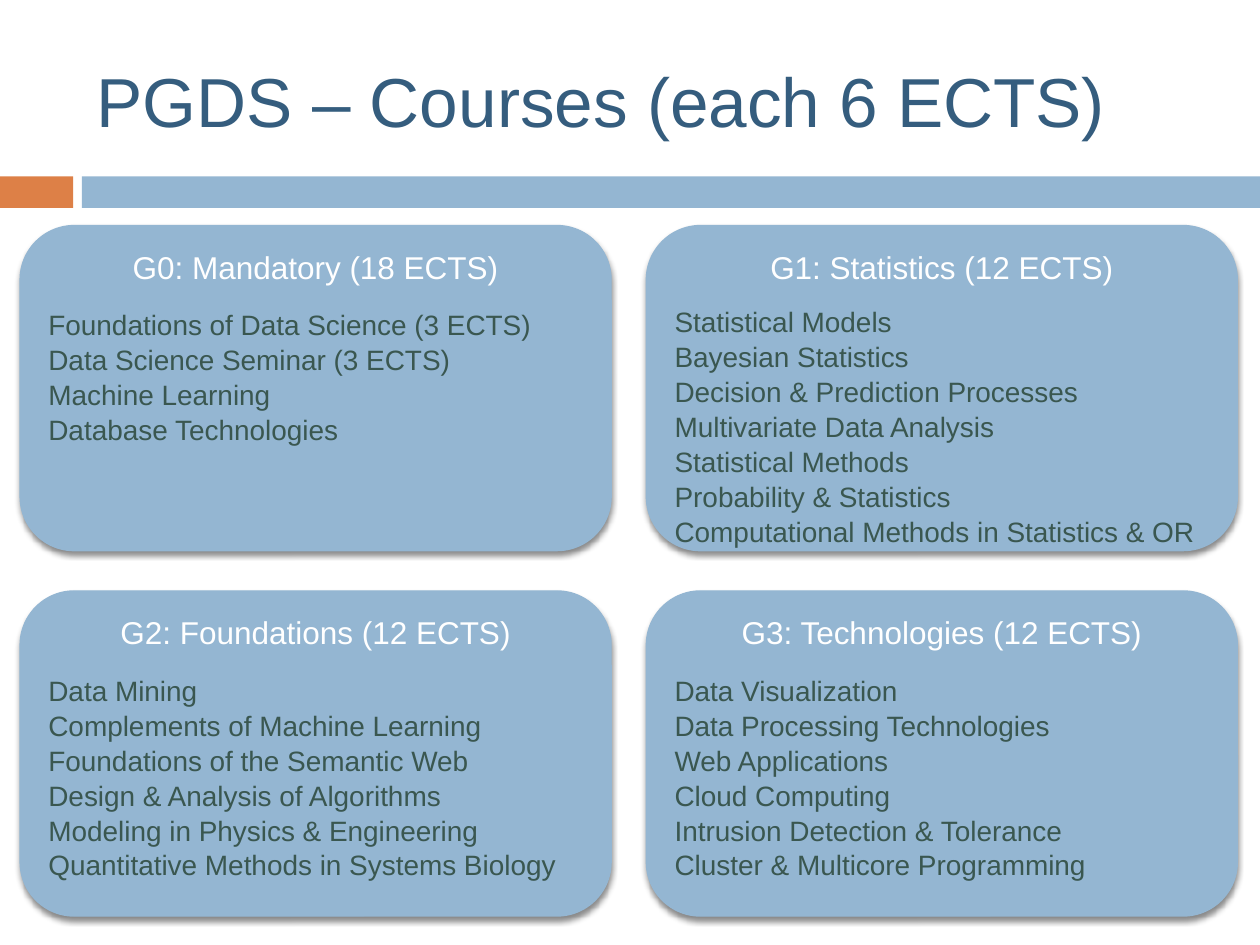
from lxml import etree
from pptx import Presentation
from pptx.dml.color import RGBColor
from pptx.enum.shapes import MSO_SHAPE
from pptx.enum.text import MSO_ANCHOR, PP_ALIGN
from pptx.oxml.ns import qn
from pptx.util import Inches, Pt

RECT, ROUND = MSO_SHAPE.RECTANGLE, MSO_SHAPE.ROUNDED_RECTANGLE
TOP, MIDDLE = MSO_ANCHOR.TOP, MSO_ANCHOR.MIDDLE
LEFT, CENTER = PP_ALIGN.LEFT, PP_ALIGN.CENTER
WIDE, HIGH = 10, 7.5
FONT = "Arial"
COLORS = {
    "title": "355D7E", "accent": "DD8047", "panel": "94B6D2",
    "head": "FFFFFF", "body": "3A5750", "shade": "000000",
}
GROUPS = [
    ("G0: Mandatory (18 ECTS)", 12, [
        "Foundations of Data Science (3 ECTS)", "Data Science Seminar (3 ECTS)",
        "Machine Learning", "Database Technologies"]),
    ("G1: Statistics (12 ECTS)", 10, [
        "Statistical Models", "Bayesian Statistics",
        "Decision & Prediction Processes", "Multivariate Data Analysis",
        "Statistical Methods", "Probability & Statistics",
        "Computational Methods in Statistics & OR"]),
    ("G2: Foundations (12 ECTS)", 12, [
        "Data Mining", "Complements of Machine Learning",
        "Foundations of the Semantic Web", "Design & Analysis of Algorithms",
        "Modeling in Physics & Engineering",
        "Quantitative Methods in Systems Biology"]),
    ("G3: Technologies (12 ECTS)", 12, [
        "Data Visualization", "Data Processing Technologies",
        "Web Applications", "Cloud Computing",
        "Intrusion Detection & Tolerance", "Cluster & Multicore Programming"]),
]


def color(name):
    return RGBColor.from_string(COLORS[name])


def block(slide, kind, box, fill):
    shape = slide.shapes.add_shape(kind, *map(Inches, box))
    shape.shadow.inherit = False
    shape.fill.solid()
    shape.fill.fore_color.rgb = color(fill)
    shape.line.fill.background()
    return shape


def style(para, text, size, tint, align=LEFT):
    para.text = text
    para.alignment = align
    para.font.name = FONT
    para.font.size = Pt(size)
    para.font.color.rgb = color(tint)


def shade(shape):
    effects = shape._element.spPr.find(qn("a:effectLst"))
    outer = etree.SubElement(
        effects, qn("a:outerShdw"), blurRad=str(Pt(3)), dist=str(Pt(2.4)),
        dir="5400000", rotWithShape="0")
    tone = etree.SubElement(outer, qn("a:srgbClr"), val=COLORS["shade"])
    etree.SubElement(tone, qn("a:alpha"), val="45000")


def title(slide, box, text):
    frame = slide.shapes.add_textbox(*map(Inches, box)).text_frame
    frame.word_wrap = True
    frame.vertical_anchor = MIDDLE
    style(frame.paragraphs[0], text, 39.6, "title")


def band(slide, box):
    left, top, width, height = box
    tab, start = 0.058 * width, 0.065 * width
    block(slide, RECT, (left, top, tab, height), "accent")
    block(slide, RECT, (left + start, top, width - start, height), "panel")


def panel(slide, box, head, gap, courses):
    shape = block(slide, ROUND, box, "panel")
    shape.line.color.rgb = color("panel")
    shape.line.width = Pt(0.79)
    shade(shape)
    frame = shape.text_frame
    frame.word_wrap = True
    frame.vertical_anchor = TOP
    first = frame.paragraphs[0]
    style(first, head, 18, "head", CENTER)
    first.space_after = Pt(gap)
    for course in courses:
        para = frame.add_paragraph()
        style(para, course, 16, "body")
        para.space_before = Pt(0.8)


def grid(slide, box, groups, cols=2, gaps=(0.28, 0.32)):
    left, top, width, height = box
    rows = len(groups) // cols
    wide = (width - gaps[0] * (cols - 1)) / cols
    high = (height - gaps[1] * (rows - 1)) / rows
    for i, group in enumerate(groups):
        row, col = divmod(i, cols)
        x = left + col * (wide + gaps[0])
        y = top + row * (high + gaps[1])
        panel(slide, (x, y, wide, high), *group)


def main():
    deck = Presentation()
    deck.slide_width, deck.slide_height = Inches(WIDE), Inches(HIGH)
    slide = deck.slides.add_slide(deck.slide_layouts[6])
    band(slide, (0, 1.4, WIDE, 0.25))
    title(slide, (0.67, 0.25, 8.92, 1.08), "PGDS – Courses (each 6 ECTS)")
    grid(slide, (0.16, 1.79, 9.66, 5.48), GROUPS)
    deck.save("out.pptx")


if __name__ == "__main__":
    main()
